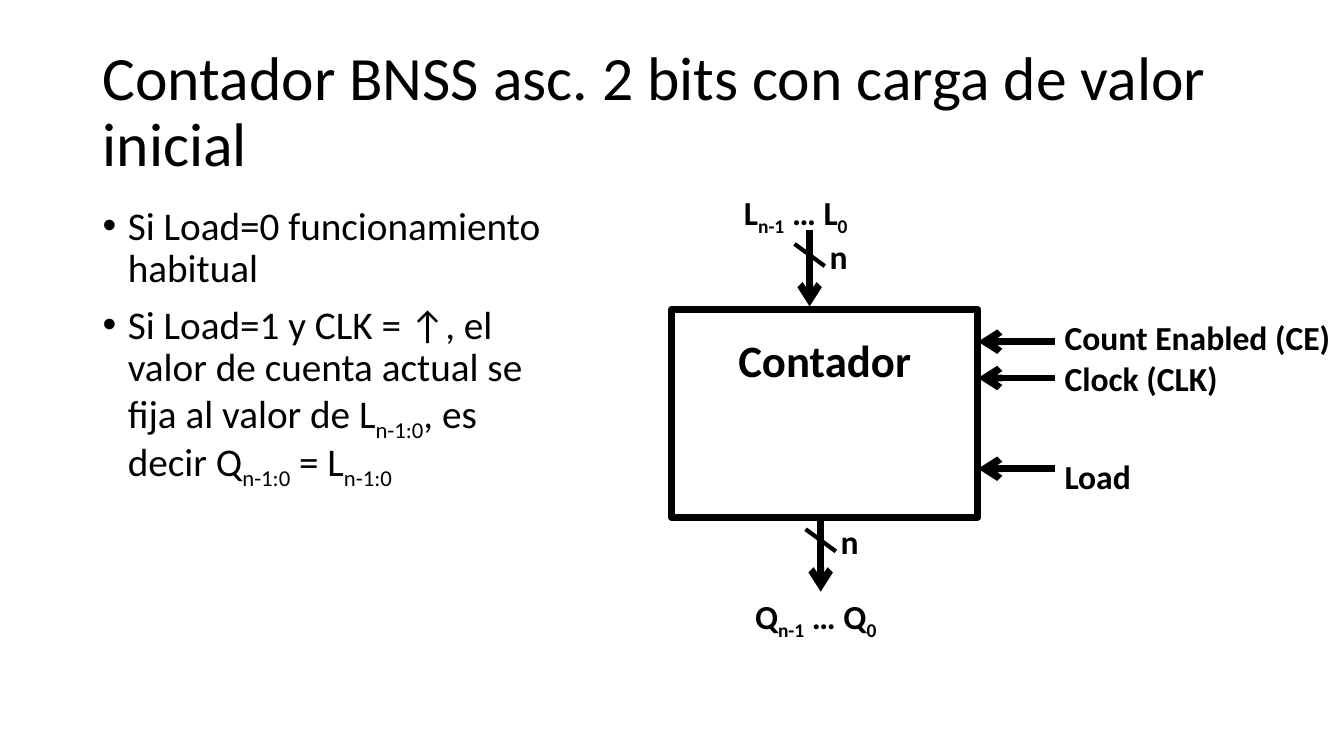
import pptx
import pptx.util
import pptx.dml.color
import pptx.enum.shapes
import pptx.enum.text
import pptx.oxml.ns
import lxml.etree

# Content: each text is a tuple of pieces, normal and subscript by turns
TITLE = ("Contador BNSS asc. 2 bits con carga de valor inicial",)
POINTS = [
    ("Si Load=0 funcionamiento habitual",),
    ("Si Load=1 y CLK = ↑, el valor de cuenta actual se fija al valor de L",
     "n-1:0", ", es decir Q", "n-1:0", " = L", "n-1:0"),
]
BLOCK = ("Contador",)
WIDTH = ("n",)
# Buses: x, arrow top, label top, label
BUSES = [
    (8.03, 2.28, 1.85, ("L", "n-1", " … L", "0")),
    (8.14, 5.11, 5.86, ("Q", "n-1", " … Q", "0")),
]
# Controls: arrow height, label top, label
CONTROLS = [
    (3.39, 3.09, ("Count Enabled (CE)",)),
    (3.75, 3.50, ("Clock (CLK)",)),
    (4.65, 4.47, ("Load",)),
]

# Style and layout, in inches
COLORS = {"ink": "000000", "paper": "FFFFFF"}
FONT = "Calibri"
WIDE, HIGH = 13.33, 7.5
LEFT = 0.92
BOX = (6.66, 3.07, 3.04, 2.06)
ARROW = 0.76
LABEL = (2.87, 0.5)

inch = pptx.util.Inches
deck = pptx.Presentation()
deck.slide_width, deck.slide_height = inch(WIDE), inch(HIGH)
slide = deck.slides.add_slide(deck.slide_layouts[6])


def color(name):
    return pptx.dml.color.RGBColor.from_string(COLORS[name])


def add_xml(parent, tag, **attrs):
    return lxml.etree.SubElement(parent, pptx.oxml.ns.qn(tag), **attrs)


def write(para, pieces, size, bold=False):
    for i, piece in enumerate(pieces):
        run = para.add_run()
        run.text = piece
        run.font.name, run.font.size = FONT, pptx.util.Pt(size)
        run.font.bold = bold
        run.font.color.rgb = color("ink")
        if i % 2:
            run.font._element.set("baseline", "-25000")


def text_box(x, y, w, h):
    frame = slide.shapes.add_textbox(inch(x), inch(y), inch(w), inch(h)).text_frame
    frame.word_wrap = True
    return frame


def label(x, y, pieces):
    frame = text_box(x, y, *LABEL)
    frame.margin_right = 0
    write(frame.paragraphs[0], pieces, 24, True)


def line(x1, y1, x2, y2, width, arrow=False):
    link = slide.shapes.add_connector(
        pptx.enum.shapes.MSO_CONNECTOR.STRAIGHT,
        inch(x1), inch(y1), inch(x2), inch(y2))
    link.line.color.rgb = color("ink")
    link.line.width = pptx.util.Pt(width)
    if arrow:
        add_xml(link.line._get_or_add_ln(), "a:tailEnd", type="arrow")
    add_xml(link._element.spPr, "a:effectLst")


# Title
frame = text_box(LEFT, 0.4, WIDE - 2 * LEFT, 1.45)
frame.vertical_anchor = pptx.enum.text.MSO_ANCHOR.MIDDLE
frame.paragraphs[0].line_spacing = 0.9
write(frame.paragraphs[0], TITLE, 44)

# Bullet points
frame = text_box(LEFT, 2, 4.78, 4.76)
for i, point in enumerate(POINTS):
    para = frame.add_paragraph() if i else frame.paragraphs[0]
    props = para._p.get_or_add_pPr()
    props.set("marL", str(inch(0.25)))
    props.set("indent", str(inch(-0.25)))
    add_xml(props, "a:buFont", typeface="Arial")
    add_xml(props, "a:buChar", char="•")
    para.line_spacing = 0.9
    para.space_before = pptx.util.Pt(10 if i else 0)
    write(para, point, 28)

# Counter block
block = slide.shapes.add_shape(
    pptx.enum.shapes.MSO_SHAPE.RECTANGLE, *map(inch, BOX))
block.shadow.inherit = False
block.fill.solid()
block.fill.fore_color.rgb = color("paper")
block.line.color.rgb = color("ink")
block.line.width = pptx.util.Pt(5)
frame = block.text_frame
frame.vertical_anchor = pptx.enum.text.MSO_ANCHOR.TOP
frame.margin_top = inch(0.23)
frame.paragraphs[0].alignment = pptx.enum.text.PP_ALIGN.CENTER
write(frame.paragraphs[0], BLOCK, 32, True)

# Buses with a slash and their width
for x, y, top, name in BUSES:
    line(x, y, x, y + ARROW, 5, True)
    line(x - 0.15, y + 0.14, x + 0.15, y + 0.36, 3)
    label(x + 0.1, y + 0.01, WIDTH)
    label(x - 0.75, top, name)

# Control inputs
side = BOX[0] + BOX[2]
for y, top, name in CONTROLS:
    line(side + ARROW, y, side, y, 5, True)
    label(side + ARROW, top, name)

deck.save("out.pptx")
